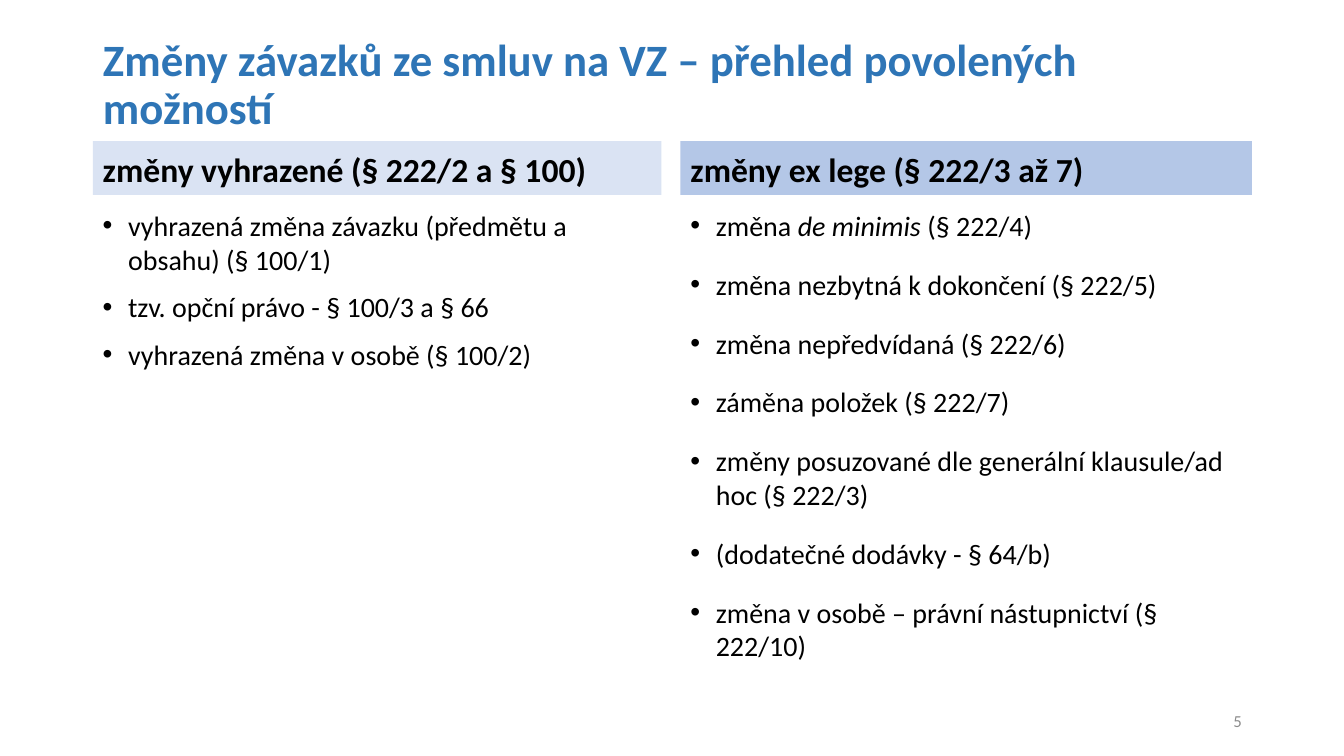
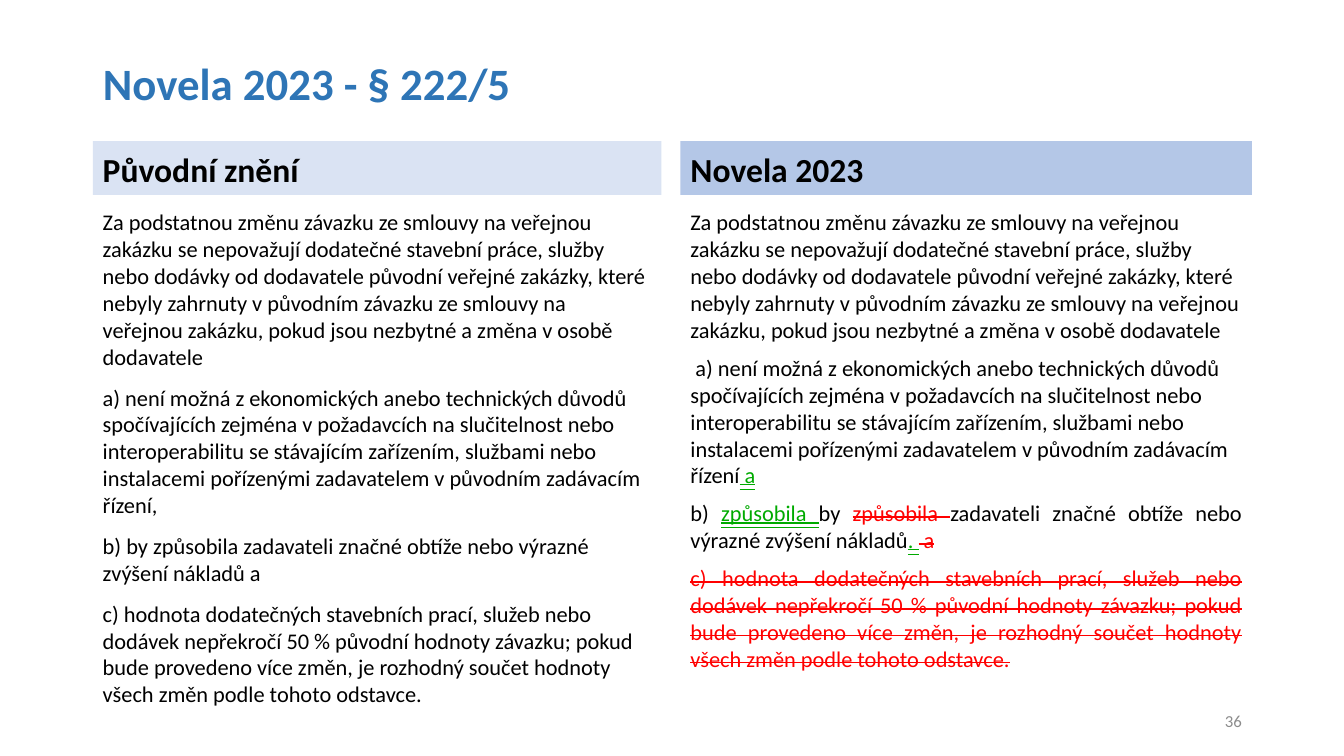
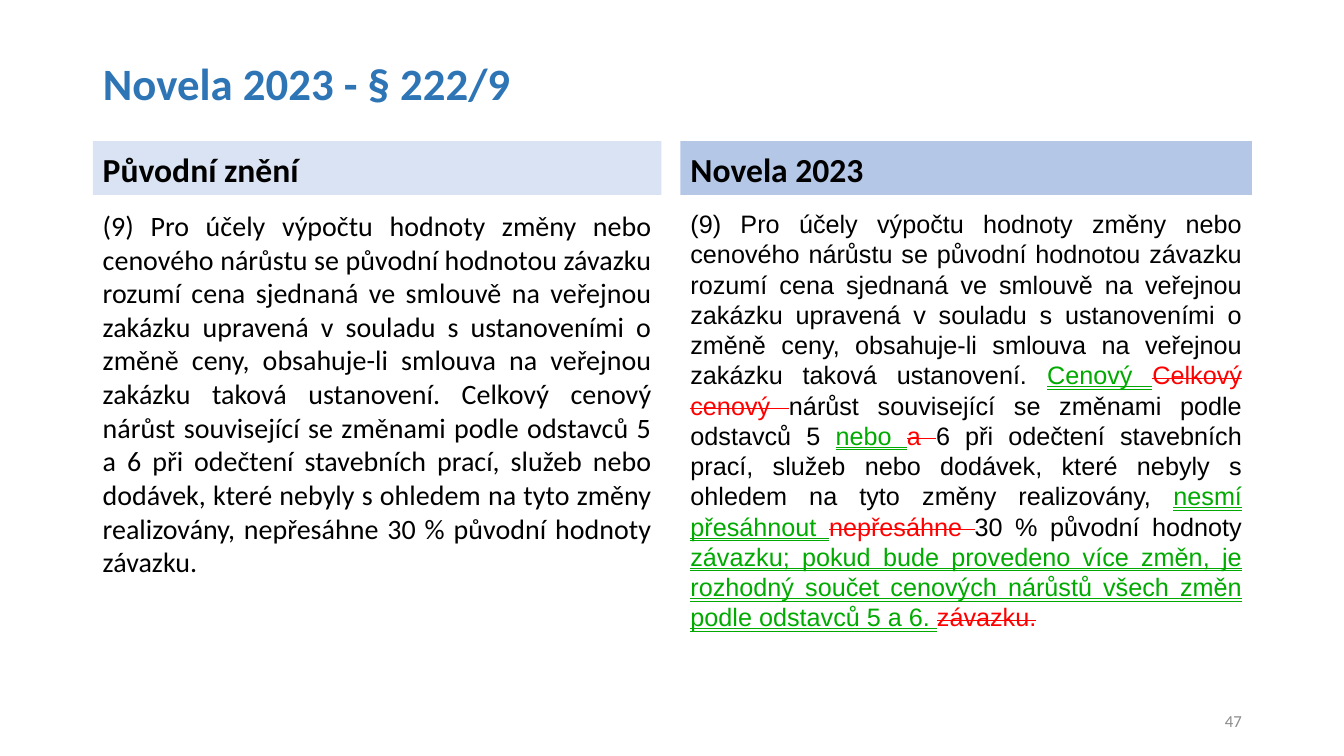
"""Build three slides that compare contract-change rules in two columns."""
from lxml.etree import SubElement
from pptx import Presentation
from pptx.dml.color import RGBColor
from pptx.enum.shapes import MSO_SHAPE as Shape
from pptx.enum.text import MSO_ANCHOR as Anchor, MSO_AUTO_SIZE as Auto
from pptx.enum.text import MSO_UNDERLINE as Under, PP_ALIGN as Align
from pptx.oxml.ns import qn
from pptx.util import Cm, Pt

BLUE, BLACK, GREY = "2E75B6", "000000", "8C8C8C"
MARKS = {"new": "00AA00", "cut": "FF0000"}
SIDES = {"l": Align.LEFT, "r": Align.RIGHT, "j": Align.JUSTIFY}
COLS = [(2.34, 14.33, "DAE3F3"), (17.15, 14.4, "B4C7E7")]

INTRO = ("Za podstatnou změnu závazku ze smlouvy na veřejnou zakázku se nepovažují dodatečné "
         "stavební práce, služby nebo dodávky od dodavatele původní veřejné zakázky, které nebyly "
         "zahrnuty v původním závazku ze smlouvy na veřejnou zakázku, pokud jsou nezbytné a změna "
         "v osobě dodavatele")
TECH = ("a) není možná z ekonomických anebo technických důvodů spočívajících zejména v požadavcích "
        "na slučitelnost nebo interoperabilitu se stávajícím zařízením, službami nebo instalacemi "
        "pořízenými zadavatelem v původním zadávacím řízení")
COST = "zadavateli značné obtíže nebo výrazné zvýšení nákladů"
LIMIT = ("c) hodnota dodatečných stavebních prací, služeb nebo dodávek nepřekročí 50 % původní "
         "hodnoty závazku; pokud bude provedeno více změn, je rozhodný součet hodnoty všech změn "
         "podle tohoto odstavce.")
PRICE = ("(9) Pro účely výpočtu hodnoty změny nebo cenového nárůstu se původní hodnotou závazku "
         "rozumí cena sjednaná ve smlouvě na veřejnou zakázku upravená v souladu s ustanoveními "
         "o změně ceny, obsahuje-li smlouva na veřejnou zakázku taková ustanovení. ")
RISE = "nárůst související se změnami podle odstavců 5 "
WORKS = ("6 při odečtení stavebních prací, služeb nebo dodávek, které nebyly s ohledem na tyto "
         "změny realizovány, ")
SHARE = "30 % původní hodnoty "

SLIDES = [
    ("Změny závazků ze smluv na VZ – přehled povolených možností", "5", [
        ("změny vyhrazené (§ 222/2 a § 100)", [
            "vyhrazená změna závazku (předmětu a obsahu) (§ 100/1)",
            "tzv. opční právo - § 100/3 a § 66",
            "vyhrazená změna v osobě (§ 100/2)",
        ], dict(size=20, before=10, bullet=True)),
        ("změny ex lege (§ 222/3 až 7)", [
            ["změna ", ("de minimis", "italic"), " (§ 222/4)"],
            "změna nezbytná k dokončení (§ 222/5)",
            "změna nepředvídaná (§ 222/6)",
            "záměna položek (§ 222/7)",
            "změny posuzované dle generální klausule/ad hoc (§ 222/3)",
            "(dodatečné dodávky - § 64/b)",
            "změna v osobě – právní nástupnictví (§ 222/10)",
        ], dict(size=20, before=10, after=8, bullet=True)),
    ]),
    ("Novela 2023 - § 222/5", "36", [
        ("Původní znění", [
            INTRO, TECH + ",", "b) by způsobila " + COST + " a", LIMIT,
        ], dict(size=16, before=10)),
        ("Novela 2023", [
            INTRO,
            [" " + TECH, (" a", "new")],
            ["b) ", ("způsobila ", "new"), "by ", ("způsobila ", "cut"), COST,
             (". ", "new"), (" a", "cut")],
            [(LIMIT, "cut")],
        ], dict(size=16, after=8, sides="lljj")),
    ]),
    ("Novela 2023 - § 222/9", "47", [
        ("Původní znění", [
            PRICE + "Celkový cenový " + RISE + "a " + WORKS + "nepřesáhne " + SHARE + "závazku.",
        ], dict(size=20, after=6, sides="j")),
        ("Novela 2023", [
            [PRICE, ("Cenový ", "new"), ("Celkový cenový ", "cut"), RISE,
             ("nebo ", "new"), ("a ", "cut"), WORKS,
             ("nesmí přesáhnout ", "new"), ("nepřesáhne ", "cut"), SHARE,
             ("závazku; pokud bude provedeno více změn, je rozhodný součet cenových nárůstů "
              "všech změn podle odstavců 5 a 6. ", "new"), ("závazku.", "cut")],
        ], dict(size=18, after=6, sides="j", face="Arial")),
    ]),
]


def tint(code):
    """Turn a hex string into a colour."""
    return RGBColor.from_string(code)


def place(shape, left, top, width, height):
    """Set position and size in centimetres."""
    shape.left, shape.top = Cm(left), Cm(top)
    shape.width, shape.height = Cm(width), Cm(height)


def dot(para):
    """Give a paragraph a hanging round bullet."""
    props = para._p.get_or_add_pPr()
    props.set("marL", str(Cm(0.64)))
    props.set("indent", str(-Cm(0.64)))
    SubElement(props, qn("a:buFont")).set("typeface", "Arial")
    SubElement(props, qn("a:buChar")).set("char", "•")


def write(shape, paras, size=20, color=BLACK, bold=False, face="Calibri", sides="l",
          before=0, after=0, gap=None, anchor=Anchor.TOP, bullet=False):
    """Fill a shape with paragraphs of plain or marked runs."""
    frame = shape.text_frame
    frame.word_wrap, frame.auto_size = True, Auto.NONE
    frame.vertical_anchor = anchor
    for num, runs in enumerate(paras):
        para = frame.add_paragraph() if num else frame.paragraphs[0]
        para.alignment = SIDES[sides[min(num, len(sides) - 1)]]
        para.line_spacing = gap or Pt(1.2 * size)
        para.space_before, para.space_after = Pt(before), Pt(after)
        if bullet:
            dot(para)
        for item in [runs] if isinstance(runs, str) else runs:
            text, mark = (item, "") if isinstance(item, str) else item
            run = para.add_run()
            run.text = text
            font = run.font
            font.name, font.size, font.bold = face, Pt(size), bold
            font.color.rgb = tint(MARKS.get(mark, color))
            if mark == "italic":
                font.italic = True
            elif mark == "new":
                font.underline = Under.DOUBLE_LINE
            elif mark == "cut":
                run._r.get_or_add_rPr().set("strike", "sngStrike")


def column(slide, spot, head, paras, style):
    """Draw a headed band with its body text below."""
    left, width, fill = spot
    band = slide.shapes.add_shape(Shape.RECTANGLE, 0, 0, 0, 0)
    place(band, left, 3.56, width, 1.35)
    band.shadow.inherit = False
    band.fill.solid()
    band.fill.fore_color.rgb = tint(fill)
    band.line.fill.background()
    write(band, [head], size=24, bold=True, gap=0.9, anchor=Anchor.BOTTOM)
    body = slide.shapes.add_textbox(0, 0, 0, 0)
    place(body, left, 5.13, width, 12.14)
    write(body, paras, **style)


def main():
    """Build and save the deck."""
    deck = Presentation()
    deck.slide_width, deck.slide_height = Cm(33.87), Cm(19.05)
    for title, page, cols in SLIDES:
        slide = deck.slides.add_slide(deck.slide_layouts[5])
        place(slide.shapes.title, 2.34, 1.02, 29.21, 2.29)
        write(slide.shapes.title, [title], size=32, color=BLUE, bold=True, gap=0.9,
              anchor=Anchor.MIDDLE)
        for spot, col in zip(COLS, cols):
            column(slide, spot, *col)
        foot = slide.shapes.add_textbox(0, 0, 0, 0)
        place(foot, 23.93, 17.65, 7.62, 1.02)
        write(foot, [page], size=12, color=GREY, sides="r", anchor=Anchor.MIDDLE)
    deck.save("out.pptx")


if __name__ == "__main__":
    main()
